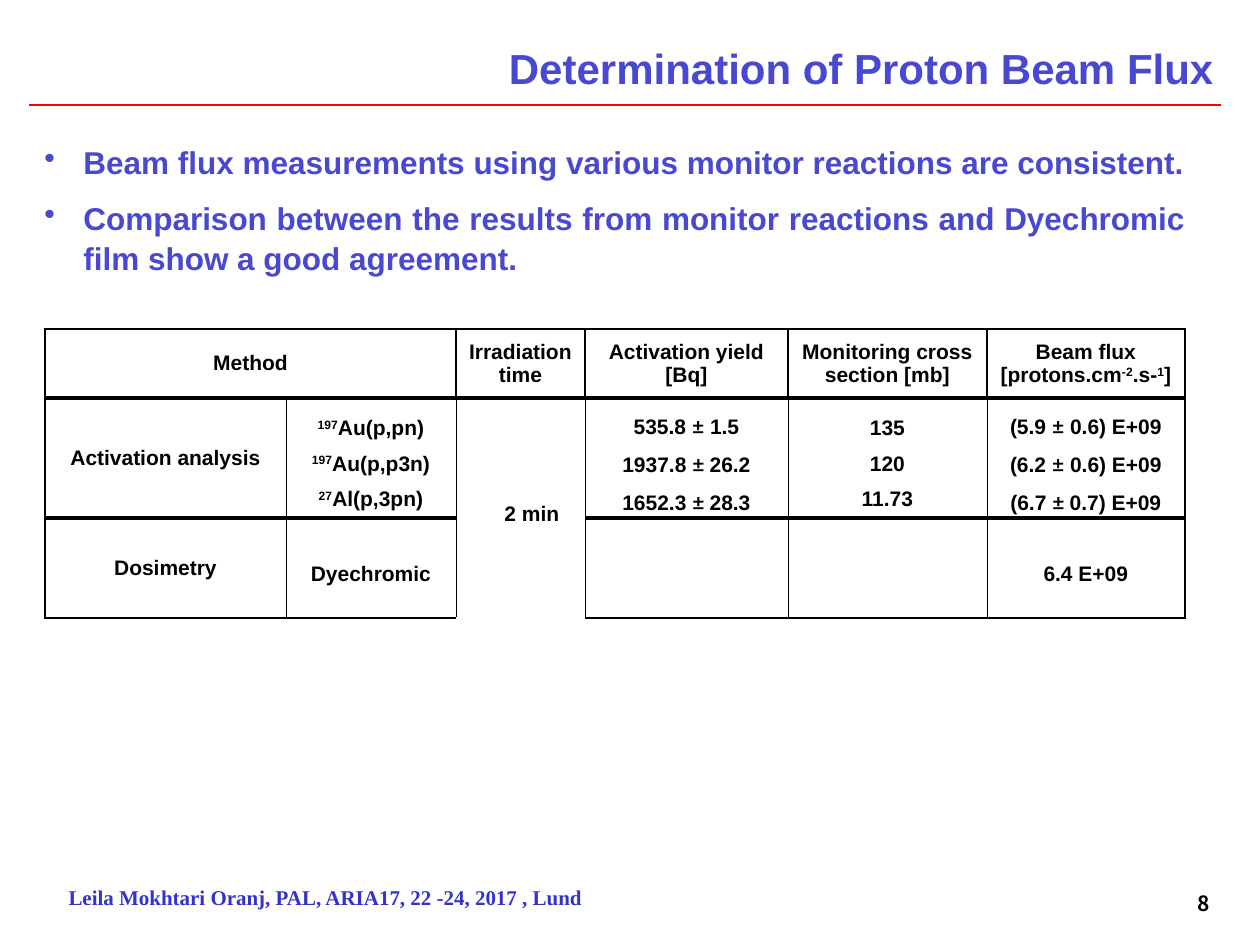
from pptx import Presentation
from pptx.dml.color import RGBColor
from pptx.enum.shapes import MSO_CONNECTOR
from pptx.enum.text import MSO_ANCHOR, PP_ALIGN
from pptx.oxml.ns import qn
from pptx.util import Emu, Pt
from lxml import etree

LINE = MSO_CONNECTOR.STRAIGHT
TOP, MIDDLE = MSO_ANCHOR.TOP, MSO_ANCHOR.MIDDLE
CENTER, RIGHT, JUSTIFY = PP_ALIGN.CENTER, PP_ALIGN.RIGHT, PP_ALIGN.JUSTIFY

WHITE = RGBColor(0xFF, 0xFF, 0xFF)
BLACK = RGBColor(0, 0, 0)
RED = RGBColor(0xFF, 0, 0)
VIOLET = RGBColor(0x48, 0x48, 0xD1)
BLUE = RGBColor(0x33, 0x33, 0xCC)

THIN, MID, THICK = 0.28, 1.5, 2.55  # table rules, in points

COLS = [241, 170, 129, 203, 199, 198]
ROWS = [69, 120, 100]

# "|" parts the runs of a line, and "^" raises a run
CELLS = [
    [["Method"], [], ["Irradiation time"], ["Activation yield", "[Bq]"],
     ["Monitoring cross section [mb]"],
     ["Beam flux [protons.cm|^-2|.s-|^1|]"]],
    [["Activation analysis"],
     ["^197|Au(p,pn)", "^197|Au(p,p3n)", "^27|Al(p,3pn)"],
     ["2 min"],
     ["535.8 |±| 1.5", "1937.8 |± |26.2", "1652.3 |± |28.3"],
     ["135", "120", "11.73"],
     ["(5.9 |±| 0.6) E+09", "(6.2 |±| 0.6) E+09", "(6.7 |± |0.7) E+09"]],
    [["Dosimetry"], ["Dyechromic"], [], [], [], ["6.4 E+09"]],
]
MERGES = [((0, 0), (0, 1)), ((1, 2), (2, 2))]


def px(n):
    return Emu(round(n * 914400 / 126))


class Deck:
    font = "Arial"
    sign = "Lato"

    def __init__(self):
        self.prs = Presentation()
        self.prs.slide_width, self.prs.slide_height = px(1260), px(945)
        self.slide = self.prs.slides.add_slide(self.prs.slide_layouts[6])

    def style(self, para, size, color, align, font=None):
        para.alignment = align
        para.font.name = font or self.font
        para.font.size = Pt(size)
        para.font.bold = True
        para.font.color.rgb = color

    def paras(self, frame, lines):
        """Yield one paragraph of the frame for each line."""
        for i, line in enumerate(lines):
            para = frame.add_paragraph() if i else frame.paragraphs[0]
            yield para, line

    def box(self, x, y, w, h, anchor=TOP):
        frame = self.slide.shapes.add_textbox(px(x), px(y), px(w), px(h)).text_frame
        frame.word_wrap = True
        frame.vertical_anchor = anchor
        return frame

    def text(self, area, line, size, color, anchor=TOP, font=None):
        para = self.box(*area, anchor).paragraphs[0]
        para.text = line
        self.style(para, size, color, RIGHT, font)

    def list(self, area, lines, size, color, hang):
        frame = self.box(*area)
        for para, line in self.paras(frame, lines):
            para.text = line
            para.line_spacing = 1.05
            para.space_before = Pt(0 if para._p is frame.paragraphs[0]._p else 9.5)
            props = para._p.get_or_add_pPr()
            props.set("marL", str(px(hang)))
            props.set("indent", str(-px(hang)))
            etree.SubElement(props, qn("a:buChar"), char="•")
            self.style(para, size, color, JUSTIFY)

    def line(self, x1, y1, x2, y2, color, width):
        rule = self.slide.shapes.add_connector(LINE, px(x1), px(y1), px(x2), px(y2))
        rule.line.color.rgb = color
        rule.line.width = Pt(width)
        etree.SubElement(rule._element.spPr, qn("a:effectLst"))

    def edge(self, cell, side, width):
        rule = etree.SubElement(cell._tc.get_or_add_tcPr(), qn("a:ln" + side),
                                w=str(Pt(width)))
        fill = etree.SubElement(rule, qn("a:solidFill"))
        etree.SubElement(fill, qn("a:srgbClr"), val=str(BLACK))

    def frame(self, cell, row, col):
        """Draw the four borders of a cell, leaving merged joins open."""
        inner = MID if row == 0 else THIN
        sides = {
            "L": MID if col == 0 else inner,
            "R": MID if col == len(COLS) - 1 else inner,
            "T": MID if row == 0 else THICK,
            "B": MID if row == len(ROWS) - 1 else THICK,
        }
        for start, end in MERGES:
            across = start[0] == end[0]
            if (row, col) == start:
                del sides["R" if across else "B"]
            elif (row, col) == end:
                del sides["L" if across else "T"]
        for side, width in sides.items():
            self.edge(cell, side, width)

    def fill(self, cell, lines, size, spread):
        cell.fill.solid()
        cell.fill.fore_color.rgb = WHITE
        cell.vertical_anchor = MIDDLE
        cell.margin_left = cell.margin_right = px(8)
        cell.margin_top = cell.margin_bottom = px(3)
        for para, line in self.paras(cell.text_frame, lines):
            for part in line.split("|"):
                run = para.add_run()
                run.text = part.lstrip("^")
                if part.startswith("^"):
                    run._r.get_or_add_rPr().set("baseline", "30000")
                if "±" in part:
                    run.font.name = self.sign
            para.line_spacing = spread
            self.style(para, size, BLACK, CENTER)

    def table(self, x, y, size):
        grid = self.slide.shapes.add_table(
            len(ROWS), len(COLS), px(x), px(y), px(sum(COLS)), px(sum(ROWS))).table
        grid.first_row = grid.horz_banding = False
        for col, w in zip(grid.columns, COLS):
            col.width = px(w)
        for row, h in zip(grid.rows, ROWS):
            row.height = px(h)
        for start, end in MERGES:
            grid.cell(*start).merge(grid.cell(*end))
        for r, row in enumerate(CELLS):
            for c, lines in enumerate(row):
                cell = grid.cell(r, c)
                self.frame(cell, r, c)
                self.fill(cell, lines, size, 1.5 if r and c else 1)
        return grid


def main():
    deck = Deck()
    deck.text((19, 878, 576, 38), "Leila Mokhtari Oranj, PAL, ARIA17, 22 -24, 2017 , Lund",
              12, BLUE, font="Times New Roman")
    deck.line(29, 105, 1221, 105, RED, 1.5)
    deck.list((32, 135, 1166, 163), [
        "Beam flux measurements using various monitor reactions are consistent.",
        "Comparison between the results from monitor reactions and Dyechromic "
        "film show a good agreement.",
    ], 18, VIOLET, 39)
    deck.text((939, 878, 283, 50), "8", 12, BLACK, MIDDLE, "Noto Sans CJK KR")
    grid = deck.table(45, 329, 12)
    grid.cell(1, 2).margin_left = px(31)
    deck.text((344, 33, 882, 69), "Determination of Proton Beam Flux", 24, VIOLET, MIDDLE)
    deck.prs.save("out.pptx")


if __name__ == "__main__":
    main()
